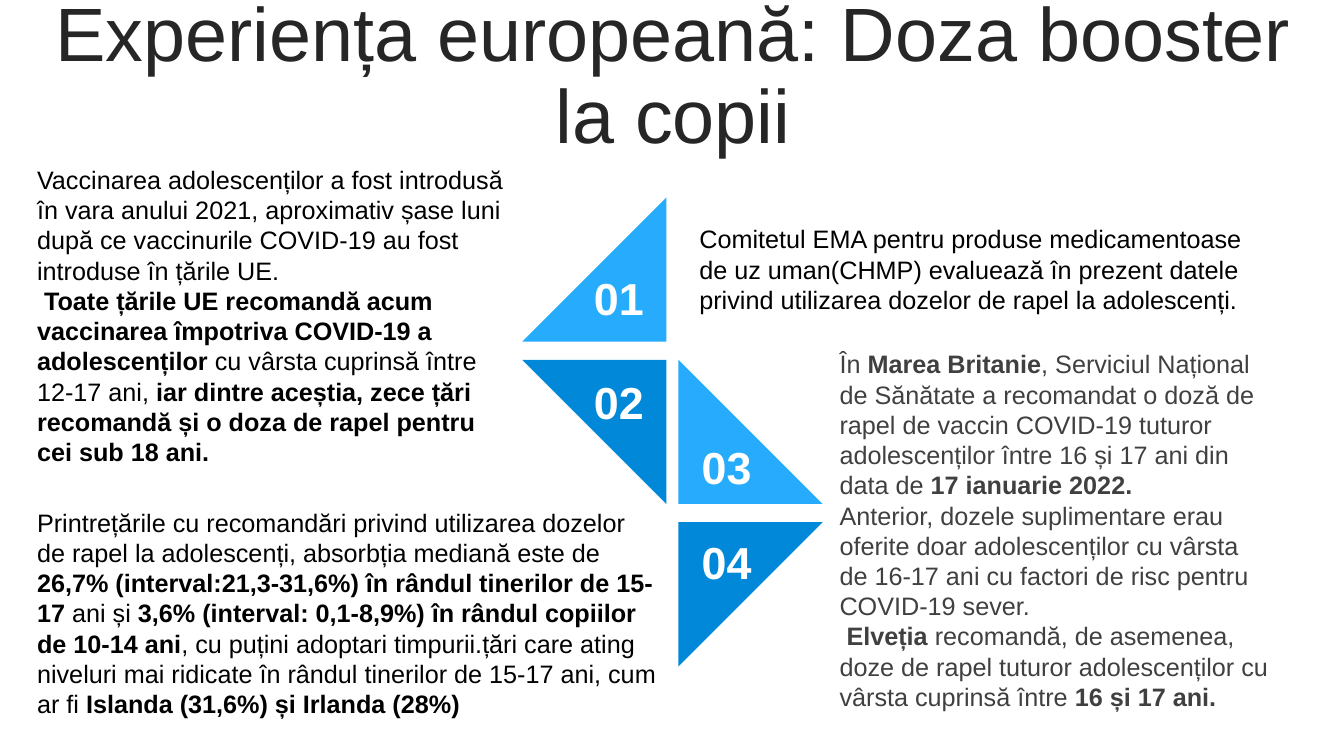
from pptx import Presentation
from pptx.dml.color import RGBColor
from pptx.enum.shapes import MSO_SHAPE as SHAPE
from pptx.enum.text import MSO_ANCHOR as ANCHOR, PP_ALIGN as ALIGN
from pptx.util import Pt

LIGHT_BLUE = RGBColor(0x27, 0xAC, 0xFD)
DARK_BLUE = RGBColor(0x02, 0x88, 0xD9)
WHITE = RGBColor(0xFF, 0xFF, 0xFF)
BLACK = RGBColor(0, 0, 0)
GREY = RGBColor(0x40, 0x40, 0x40)
TITLE_GREY = RGBColor(0x26, 0x26, 0x26)

TRIANGLE_SIZE = 103
ROW_STEP = 116
FIRST_ROW = 141
LEFT_COLUMN, RIGHT_COLUMN = 373, 484.6

TITLE = "Experiența europeană: Doza booster la copii"

ADOLESCENTS = [
    "Vaccinarea adolescenților a fost introdusă în vara anului 2021, aproximativ "
    "șase luni după ce vaccinurile COVID-19 au fost introduse în țările UE.",
    " *Toate țările UE recomandă acum vaccinarea împotriva COVID-19 a adolescenților* "
    "cu vârsta cuprinsă între 12-17 ani, *iar dintre aceștia, zece țări recomandă "
    "și o doza de rapel pentru cei sub 18 ani.*",
]
COMMITTEE = [
    "Comitetul EMA pentru produse medicamentoase de uz uman(CHMP) evaluează în "
    "prezent datele privind utilizarea dozelor de rapel la adolescenți.",
]
COUNTRIES = [
    "În *Marea Britanie*, Serviciul Național de Sănătate a recomandat o doză de "
    "rapel de vaccin COVID-19 tuturor adolescenților între 16 și 17 ani din data "
    "de *17 ianuarie 2022.*",
    "Anterior, dozele suplimentare erau oferite doar adolescenților cu vârsta de "
    "16-17 ani cu factori de risc pentru COVID-19 sever.",
    " *Elveția *recomandă, de asemenea, doze de rapel tuturor adolescenților cu "
    "vârsta cuprinsă între *16 și 17 ani.*",
]
UPTAKE = [
    "Printrețările cu recomandări privind utilizarea dozelor de rapel la "
    "adolescenți, absorbția mediană este de *26,7% (interval:21,3-31,6%) în rândul "
    "tinerilor de 15-17 *ani și *3,6% (interval: 0,1-8,9%) în rândul copiilor de "
    "10-14 ani*, cu puțini adoptari timpurii.țări care ating niveluri mai ridicate "
    "în rândul tinerilor de 15-17 ani, cum ar fi *Islanda (31,6%) și Irlanda (28%)*",
]


def add_text(s, box, paragraphs, size, color, anchor=ANCHOR.TOP, **paragraph_format):
    tf = s.shapes.add_textbox(*map(Pt, box)).text_frame
    tf.word_wrap = True
    tf.vertical_anchor = anchor
    for i, text in enumerate(paragraphs):
        p = tf.add_paragraph() if i else tf.paragraphs[0]
        for name, value in paragraph_format.items():
            setattr(p, name, value)
        for j, part in enumerate(text.split("*")):
            if part:
                r = p.add_run()
                r.text = part
                font = {"name": "Arial", "size": Pt(size), "bold": j % 2 == 1}
                for name, value in font.items():
                    setattr(r.font, name, value)
                r.font.color.rgb = color


def add_triangle(s, left, top, rotation, color):
    sp = s.shapes.add_shape(SHAPE.RIGHT_TRIANGLE, Pt(left), Pt(top),
                            Pt(TRIANGLE_SIZE), Pt(TRIANGLE_SIZE))
    sp.rotation = rotation
    sp.shadow.inherit = False
    sp.fill.solid()
    sp.fill.fore_color.rgb = color
    sp.line.fill.background()


def add_step(s, number, row, left, rotation, color, label_left, label_drop):
    top = FIRST_ROW + row * ROW_STEP
    add_triangle(s, left, top, rotation, color)
    add_text(s, (label_left, top + label_drop, 80, 46), [f"*{number:02}*"], 32, WHITE,
             alignment=ALIGN.CENTER)


def main():
    prs = Presentation()
    prs.slide_width, prs.slide_height = Pt(960), Pt(540)
    s = prs.slides.add_slide(prs.slide_layouts[6])

    add_text(s, (25, 27, 911.5, 57), [TITLE], 54, TITLE_GREY, ANCHOR.MIDDLE,
             alignment=ALIGN.CENTER, line_spacing=0.9, space_before=Pt(10))

    add_step(s, 1, 0, LEFT_COLUMN, 270, LIGHT_BLUE, 402, 49)
    add_step(s, 2, 1, LEFT_COLUMN, 180, DARK_BLUE, 402, 7.2)
    add_step(s, 3, 1, RIGHT_COLUMN, 0, LIGHT_BLUE, 479, 53.3)
    add_step(s, 4, 2, RIGHT_COLUMN, 90, DARK_BLUE, 479, 5.7)

    for box, paragraphs, color in [
        ((19.4, 113.8, 354.2, 225.4), ADOLESCENTS, BLACK),
        ((592.6, 245.5, 322.6, 269.3), COUNTRIES, GREY),
        ((492.5, 156.2, 422.6, 72.7), COMMITTEE, BLACK),
        ((19.4, 358.6, 457.2, 159.8), UPTAKE, BLACK),
    ]:
        add_text(s, box, paragraphs, 18, color)

    prs.save("out.pptx")


if __name__ == "__main__":
    main()
